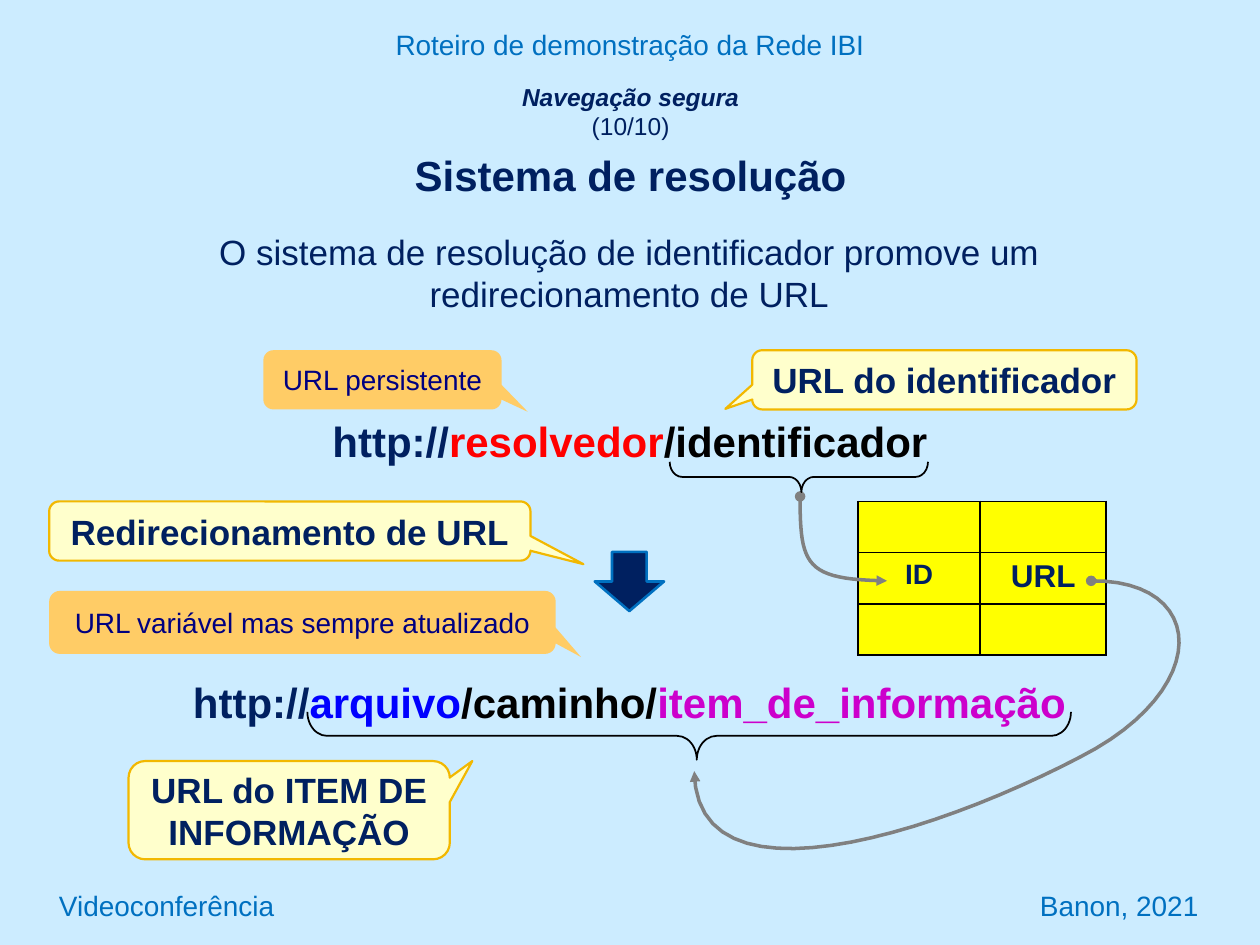
"""Build the slide that explains the identifier resolution system."""
from lxml import etree
from pptx import Presentation
from pptx import util as u
from pptx.dml.color import RGBColor
from pptx.enum import shapes, text
from pptx.oxml.ns import qn

THEME = {
    "font": "Arial", "background": "CCECFF", "navy": "002060", "blue": "0070C0",
    "ink": "000000", "red": "FF0000", "link": "0000FF", "magenta": "CC00CC",
    "note": "000080", "orange": "FFCC66", "cream": "FFFFCC", "gold": "F2B800",
    "yellow": "FFFF00", "grey": "808080",
    "small": 14, "label": 16, "cell": 18, "lead": 20, "heading": 24,
}
ALIGN = text.PP_ALIGN
KIND = shapes.MSO_SHAPE
MIDDLE = text.MSO_ANCHOR.MIDDLE

TITLE_BOX = (0.75, 0.6, 8.51, 0.98)
TITLE = [
    [("Navegação segura", "navy", "small", {"bold": True, "italic": True}), None,
     ("(10/10)", "navy", "small", {"bold": False})],
    [("Sistema de resolução", "navy", "heading", {"bold": True})],
]
BODY_BOX = (0.92, 1.78, 8.15, 0.77)
BODY = [[("O sistema de resolução de identificador promove um redirecionamento de URL",
          "navy", "lead", {})]]
BOLD = {"bold": True}
TEXT_BOXES = [
    ((0, 0.17, 10, 0.37), ALIGN.CENTER,
     [("Roteiro de demonstração da Rede IBI", "blue", "label", {})]),
    ((0.37, 7, 4, 0.42), ALIGN.LEFT, [("Videoconferência", "blue", "label", {})]),
    ((5.61, 7, 4, 0.42), ALIGN.RIGHT, [("Banon, 2021", "blue", "label", {})]),
    ((2.5, 3.25, 5, 0.5), ALIGN.CENTER,
     [("http://", "navy", "heading", BOLD), ("resolvedor", "red", "heading", BOLD),
      ("/identificador", "ink", "heading", BOLD)]),
    ((1.38, 5.32, 7.23, 0.5), ALIGN.CENTER,
     [("http://", "navy", "heading", BOLD), ("arquivo", "link", "heading", BOLD),
      ("/caminho/", "ink", "heading", BOLD),
      ("item_de_informação", "magenta", "heading", BOLD)]),
]
CALLOUT_STYLES = {
    "note": ("orange", None, ("note", "label", {})),
    "key": ("cream", ("gold", 1.25), ("navy", "lead", BOLD)),
}
CALLOUTS = [
    ("note", (2.09, 2.78, 1.89, 0.47), (0.61, 0.54), "URL persistente"),
    ("note", (0.39, 4.69, 4.02, 0.5), (0.55, 0.55), "URL variável mas sempre atualizado"),
    ("key", (0.39, 3.98, 3.82, 0.47), (0.61, 0.56), "Redirecionamento de URL"),
    ("key", (5.97, 2.78, 3.05, 0.47), (-0.57, 0.49), "URL do identificador"),
    ("key", (1.02, 6.04, 2.55, 0.78), (0.57, -0.5), "URL do ITEM DE INFORMAÇÃO"),
]
ARROW_BOX = (4.72, 4.38, 0.55, 0.47)
BRACES = [(5.28, 2.81, 0.38, 6.06), (6.22, 2.76, 0.24, 2.05)]
TABLE_BOX = (6.81, 3.98, 1.97, 1.22)
COLUMN_WIDTHS = (0.97, 1)
ROWS = [(None, None), (("ID", "label"), ("URL", "cell")), (None, None)]
CURVES = [
    [(6.35, 3.94), (6.35, 4.49), (6.39, 4.6), (7.04, 4.61)],
    [(8.66, 4.61), (9.58, 4.6), (9.63, 5.47), (8.57, 6.01),
     (7.38, 6.63), (5.52, 7.22), (5.51, 6.12)],
]
CURVE_STEPS = 24


def color(name):
    return RGBColor.from_string(THEME[name])


def inches(values):
    return [u.Inches(value) for value in values]


def apply(target, values):
    for name, value in values.items():
        setattr(target, name, value)


def write(frame, paragraphs, align=ALIGN.CENTER, anchor=text.MSO_ANCHOR.TOP):
    apply(frame, {"word_wrap": True, "auto_size": text.MSO_AUTO_SIZE.NONE,
                  "vertical_anchor": anchor})
    for index, runs in enumerate(paragraphs):
        paragraph = frame.add_paragraph() if index else frame.paragraphs[0]
        apply(paragraph, {"alignment": align, "space_before": u.Pt(4.8 if index else 0)})
        for item in runs:
            if item is None:
                paragraph.add_line_break()
                continue
            words, ink, size, extra = item
            run = paragraph.add_run()
            run.text = words
            apply(run.font, {"name": THEME["font"], "size": u.Pt(THEME[size]), **extra})
            run.font.color.rgb = color(ink)


def paint(shape, fill=None, line=None):
    shape.shadow.inherit = False
    if fill:
        shape.fill.solid()
        shape.fill.fore_color.rgb = color(fill)
    else:
        shape.fill.background()
    if line:
        shape.line.color.rgb = color(line[0])
        shape.line.width = u.Pt(line[1])
    else:
        shape.line.fill.background()


def fill_placeholder(shape, box, paragraphs):
    apply(shape, dict(zip(("left", "top", "width", "height"), inches(box))))
    write(shape.text_frame, paragraphs)


def add_preset(slide, kind, box, adjustments=()):
    shape = slide.shapes.add_shape(kind, *inches(box))
    for index, value in enumerate(adjustments):
        shape.adjustments[index] = value
    return shape


def add_border(cell):
    properties = cell._tc.get_or_add_tcPr()
    for index, side in enumerate(("lnL", "lnR", "lnT", "lnB")):
        line = etree.Element(qn(f"a:{side}"), w=str(u.Pt(1)))
        fill = etree.SubElement(line, qn("a:solidFill"))
        etree.SubElement(fill, qn("a:srgbClr"), val=THEME["ink"])
        properties.insert(index, line)


def add_lookup_table(slide):
    table = slide.shapes.add_table(len(ROWS), len(COLUMN_WIDTHS), *inches(TABLE_BOX)).table
    apply(table, {"first_row": False, "horz_banding": False})
    for column, width in zip(table.columns, COLUMN_WIDTHS):
        column.width = u.Inches(width)
    for row, entries in enumerate(ROWS):
        for column, entry in enumerate(entries):
            cell = table.cell(row, column)
            cell.fill.solid()
            cell.fill.fore_color.rgb = color("yellow")
            add_border(cell)
            if entry:
                write(cell.text_frame, [[(entry[0], "navy", entry[1], BOLD)]])


def bezier(points, t):
    weights = ((1 - t) ** 3, 3 * t * (1 - t) ** 2, 3 * t * t * (1 - t), t ** 3)
    return tuple(u.Inches(sum(w * p[axis] for w, p in zip(weights, points)))
                 for axis in (0, 1))


def add_curve(slide, points):
    builder = slide.shapes.build_freeform(*inches(points[0]), scale=1.0)
    builder.add_line_segments(
        [bezier(points[start:start + 4], step / CURVE_STEPS)
         for start in range(0, len(points) - 1, 3)
         for step in range(1, CURVE_STEPS + 1)], close=False)
    shape = builder.convert_to_shape()
    paint(shape, line=("grey", 2))
    line = shape.element.spPr.find(qn("a:ln"))
    etree.SubElement(line, qn("a:headEnd"), type="oval")
    etree.SubElement(line, qn("a:tailEnd"), type="triangle")


def main():
    presentation = Presentation()
    apply(presentation, {"slide_width": u.Inches(10), "slide_height": u.Inches(7.5)})
    slide = presentation.slides.add_slide(presentation.slide_layouts[1])
    slide.background.fill.solid()
    slide.background.fill.fore_color.rgb = color("background")

    fill_placeholder(slide.shapes.title, TITLE_BOX, TITLE)
    body = slide.placeholders[1]
    fill_placeholder(body, BODY_BOX, BODY)
    properties = body.text_frame.paragraphs[0]._p.get_or_add_pPr()
    apply_bullet = {"marL": "0", "indent": "0"}
    properties.attrib.update(apply_bullet)
    etree.SubElement(properties, qn("a:buNone"))

    for box, align, runs in TEXT_BOXES:
        write(slide.shapes.add_textbox(*inches(box)).text_frame, [runs], align)
    paint(add_preset(slide, KIND.DOWN_ARROW, ARROW_BOX), "navy", ("blue", 1.5))
    add_lookup_table(slide)
    for points in CURVES:
        add_curve(slide, points)
    for box in BRACES:
        brace = add_preset(slide, KIND.LEFT_BRACE, box, (0.41, 0.51))
        brace.rotation = 270
        paint(brace, line=("ink", 1))
    for style, box, tip, words in CALLOUTS:
        fill, line, font = CALLOUT_STYLES[style]
        callout = add_preset(slide, KIND.ROUNDED_RECTANGULAR_CALLOUT, box, (*tip, 0.17))
        paint(callout, fill, line)
        write(callout.text_frame, [[(words, *font)]], anchor=MIDDLE)
    presentation.save("out.pptx")


if __name__ == "__main__":
    main()
